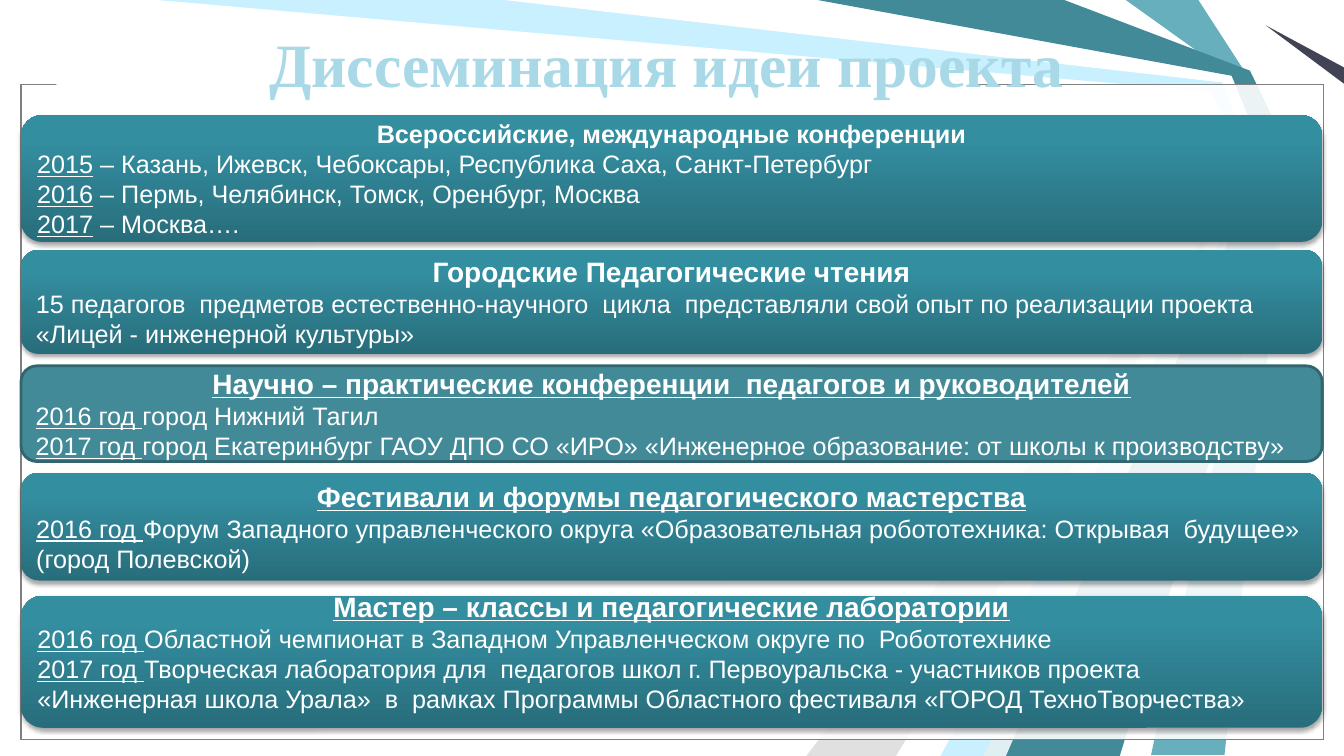
from dataclasses import dataclass

from lxml import etree
from pptx import Presentation, util as u
from pptx.dml.color import RGBColor
from pptx.enum import shapes, text
from pptx.oxml import ns

Cm, Pt = u.Cm, u.Pt


@dataclass(frozen=True)
class Theme:
    """Colours, fonts and type sizes of the slide."""
    white: str = "FFFFFF"
    title: str = "A9D9E6"
    teal: str = "428A98"
    border: str = "316670"
    frames: tuple = ("0084B4", "808080")
    gradient: tuple = ((0, "286D7B"), (80, "338EA0"), (100, "3290A3"))
    title_font: str = "Times New Roman"
    body_font: str = "Arial"
    title_size: int = 44
    heading_size: int = 20
    body_size: int = 18


T = Theme()

RAYS = [
    ("67AFBD", [(30.2, 0), (31.47, 1.96), (32.46, 4.24), (30.86, 19.02),
                (29.01, 19.02), (32.18, 4.24), (31.04, 1.91), (28.37, 0)]),
    ("C9F0FF", [(3.96, 0), (12.98, 0), (30.94, 1.98), (31.9, 4.29),
                (25.12, 19.05), (23.42, 19.05), (31.65, 4.39), (30.51, 2.31)]),
    ("E0E0E0", [(22.58, 19.05), (31.39, 4.6), (20.32, 19.05)]),
    ("FFFFFF", [(12.7, 0), (30.81, 2.08), (31.57, 4.11), (22.86, 19.05),
                (23.7, 19.05), (31.85, 4.01), (31.04, 1.91), (20.32, 0)]),
    ("FFFFFF", [(31.32, 0), (31.04, 0.43), (33.12, 3.05), (33.87, 3.18),
                (33.87, 2.54), (31.32, 0.43), (31.57, 0)]),
    ("424456", [(33.87, 2.11), (31.9, 0.64), (33.87, 1.7)]),
    ("428A98", [(20.6, 0), (26.82, 0), (31.5, 1.78), (32.72, 4.29),
                (28.22, 19.05), (24.84, 19.05), (31.9, 4.01), (31.04, 1.91)]),
    ("E0EFF1", [(24.79, 19.05), (31.57, 4.65), (25.35, 19.05)]),
]

CONFERENCES = ("Всероссийские, международные конференции", [
    ("2015", " – Казань, Ижевск, Чебоксары, Республика Саха, Санкт-Петербург"),
    ("2016", " – Пермь, Челябинск, Томск, Оренбург, Москва"),
    ("2017", " – Москва…."),
])
READINGS = ("Городские Педагогические чтения", [
    ("", "15 педагогов  предметов естественно-научного  цикла  представляли "
         "свой опыт по реализации проекта «Лицей - инженерной культуры»"),
])
PRACTICE = ("Научно – практические конференции  педагогов и руководителей", [
    ("2016 год ", "город Нижний Тагил"),
    ("2017 год ", "город Екатеринбург ГАОУ ДПО СО «ИРО» «Инженерное "
                  "образование: от школы к производству»"),
])
FESTIVALS = ("Фестивали и форумы педагогического мастерства", [
    ("2016 год ", "Форум Западного управленческого округа «Образовательная "
                  "робототехника: Открывая  будущее» (город Полевской)"),
])
WORKSHOPS = ("Мастер – классы и педагогические лаборатории", [
    ("2016 год ", "Областной чемпионат в Западном Управленческом округе по  "
                  "Робототехнике"),
    ("2017 год ", "Творческая лаборатория для  педагогов школ г. Первоуральска "
                  "- участников проекта «Инженерная школа Урала»  в  рамках "
                  "Программы Областного фестиваля «ГОРОД ТехноТворчества»"),
])


def rgb(value):
    """Turn a hex string into a colour."""
    return RGBColor.from_string(value)


def add_xml(parent, tag, **attrs):
    """Append a DrawingML element to a parent."""
    return etree.SubElement(parent, ns.qn(tag), {k: str(v) for k, v in attrs.items()})


def paint(sp, fill, line=None, width=0.75):
    """Give a shape a solid fill, an optional line and no shadow."""
    sp.shadow.inherit = False
    sp.fill.solid()
    sp.fill.fore_color.rgb = rgb(fill)
    if line:
        sp.line.color.rgb = rgb(line)
        sp.line.width = Pt(width)
    else:
        sp.line.fill.background()


def add_ray(s, colour, points):
    """Draw one filled background polygon."""
    corners = [(Cm(x), Cm(y)) for x, y in points]
    builder = s.shapes.build_freeform(*corners[0])
    builder.add_line_segments(corners[1:], close=True)
    paint(builder.convert_to_shape(), colour)


def add_box(s, kind, left, top, width, height):
    """Add a preset shape measured in centimetres."""
    return s.shapes.add_shape(kind, Cm(left), Cm(top), Cm(width), Cm(height))


def add_frame(s, line):
    """Draw a translucent white sheet with a thin border."""
    sp = add_box(s, shapes.MSO_SHAPE.RECTANGLE, 0.53, 2.13, 32.82, 16.51)
    paint(sp, T.white, line)
    colour = sp.element.spPr.find(ns.qn("a:solidFill"))[0]
    add_xml(colour, "a:alpha", val=69000)


def shade(sp):
    """Apply the vertical gradient and the soft shadow."""
    sp.fill.gradient()
    sp.fill.gradient_angle = 90
    stops = sp.element.spPr.find(".//" + ns.qn("a:gsLst"))
    for stop in list(stops):
        stops.remove(stop)
    for position, colour in T.gradient:
        stop = add_xml(stops, "a:gs", pos=position * 1000)
        add_xml(stop, "a:srgbClr", val=colour)
    effects = sp.element.spPr.find(ns.qn("a:effectLst"))
    shadow = add_xml(effects, "a:outerShdw", blurRad=Pt(3.1), dist=Pt(1.8),
                     dir=5400000, rotWithShape=0)
    add_xml(add_xml(shadow, "a:srgbClr", val="000000"), "a:alpha", val=35000)


def set_font(p, size, bold=False, underline=False):
    """Format a white card paragraph."""
    f = p.font
    f.name, f.size, f.bold, f.underline = T.body_font, Pt(size), bold, underline
    f.color.rgb = rgb(T.white)


def add_card(s, top, height, content, size=T.heading_size, underline=True, flat=False):
    """Add a rounded card with a centred heading and dated lines."""
    sp = add_box(s, shapes.MSO_SHAPE.ROUNDED_RECTANGLE, 0.53, top, 32.79, height)
    paint(sp, T.teal, T.border if flat else None, 2)
    if not flat:
        shade(sp)
    heading, lines = content
    tf = sp.text_frame
    tf.word_wrap = True
    tf.vertical_anchor = text.MSO_ANCHOR.MIDDLE
    p = tf.paragraphs[0]
    p.text = heading
    p.alignment = text.PP_ALIGN.CENTER
    set_font(p, size, True, underline)
    for date, details in lines:
        p = tf.add_paragraph()
        p.alignment = text.PP_ALIGN.LEFT
        set_font(p, T.body_size)
        if date:
            r = p.add_run()
            r.text = date
            r.font.underline = True
        p.add_run().text = details
    return sp


def add_title(s, words):
    """Fill the title placeholder and bring it to the front."""
    sp = s.shapes.title
    sp.left, sp.top, sp.width, sp.height = Cm(6.53), Cm(0.53), Cm(22.4), Cm(2.13)
    tf = sp.text_frame
    tf.text = words
    tf.word_wrap = True
    tf.auto_size = text.MSO_AUTO_SIZE.NONE
    tf.vertical_anchor = text.MSO_ANCHOR.TOP
    p = tf.paragraphs[0]
    p.alignment = text.PP_ALIGN.LEFT
    p.font.name, p.font.size, p.font.bold = T.title_font, Pt(T.title_size), True
    p.font.color.rgb = rgb(T.title)
    s.shapes.element.append(sp.element)


def main():
    """Build the slide and save it."""
    prs = Presentation()
    prs.slide_width, prs.slide_height = Cm(33.87), Cm(19.05)
    s = prs.slides.add_slide(prs.slide_layouts[5])
    for colour, points in RAYS:
        add_ray(s, colour, points)
    for line in T.frames:
        add_frame(s, line)
    paint(add_box(s, shapes.MSO_SHAPE.RECTANGLE, 1.42, 1.88, 23.14, 0.43), T.white)
    add_card(s, 2.9, 3.2, CONFERENCES, T.body_size, underline=False)
    add_card(s, 6.3, 2.62, READINGS, underline=False)
    add_card(s, 9.22, 2.41, PRACTICE, flat=True)
    add_card(s, 11.91, 2.72, FESTIVALS)
    workshops = add_card(s, 15.01, 3.33, WORKSHOPS)
    workshops.text_frame.margin_top, workshops.text_frame.margin_bottom = 0, Cm(0.5)
    add_title(s, "Диссеминация идеи проекта")
    prs.save("out.pptx")


if __name__ == "__main__":
    main()
